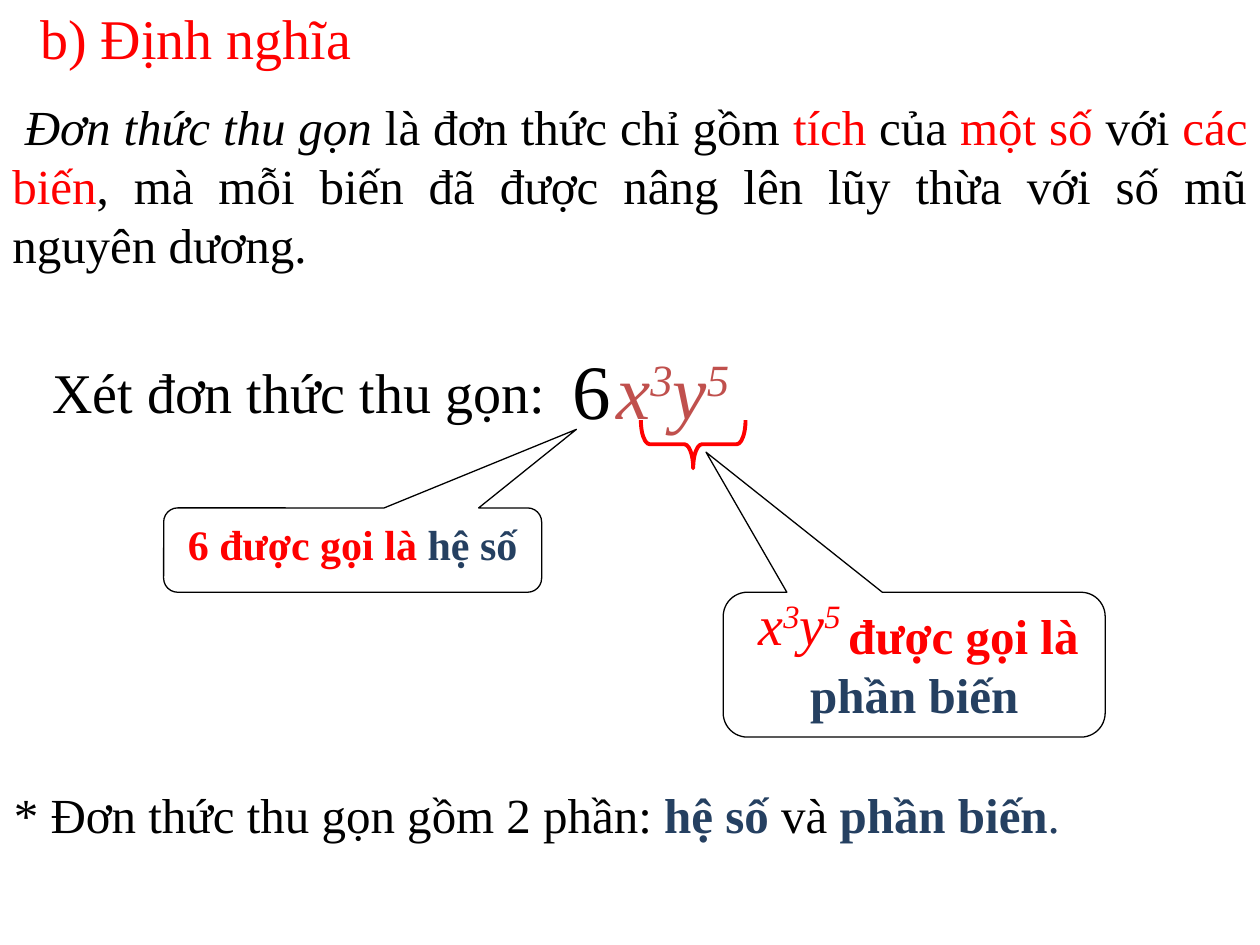
from pptx import Presentation
from pptx import util as u
from pptx.dml.color import RGBColor
from pptx.enum import shapes, text

BLACK, WHITE, RED, NAVY, BRICK = "000000", "FFFFFF", "FF0000", "254061", "C0504D"
LEFT, CENTER, JUSTIFY = text.PP_ALIGN.LEFT, text.PP_ALIGN.CENTER, text.PP_ALIGN.JUSTIFY


def color(code):
    return RGBColor.from_string(code)


class Lesson:
    font = "Times New Roman"

    def __init__(self, slide):
        self.slide = slide

    def fill_line(self, paragraph, runs, size, align=LEFT, left=0, first=0):
        paragraph.alignment = align
        if left or first:
            properties = paragraph._p.get_or_add_pPr()
            properties.set("marL", str(u.Cm(left)))
            properties.set("indent", str(u.Cm(first)))
        for words, code, *style in runs:
            run = paragraph.add_run()
            run.text = words
            run.font.name = self.font
            run.font.size = u.Pt(size)
            run.font.color.rgb = color(code)
            run.font.bold = "bold" in style
            run.font.italic = "italic" in style
            if "super" in style:
                run.font._element.set("baseline", "30000")

    def label(self, box, runs, size, wrap=True):
        frame = self.slide.shapes.add_textbox(*map(u.Cm, box)).text_frame
        frame.word_wrap = wrap
        self.fill_line(frame.paragraphs[0], runs, size)

    def power(self, box, code, size):
        runs = [(sign, code, "italic", "super" if sign.isdigit() else "base") for sign in "x3y5"]
        self.label(box, runs, size)

    def shape(self, kind, box, fill=None, line=None, width=0.75, adjust=()):
        shape = self.slide.shapes.add_shape(kind, *map(u.Cm, box))
        shape.shadow.inherit = False
        for i, value in enumerate(adjust):
            shape.adjustments[i] = value
        if fill:
            shape.fill.solid()
            shape.fill.fore_color.rgb = color(fill)
        else:
            shape.fill.background()
        if line:
            shape.line.color.rgb = color(line)
            shape.line.width = u.Pt(width)
        else:
            shape.line.fill.background()
        shape.text_frame.word_wrap = True
        shape.text_frame.vertical_anchor = text.MSO_ANCHOR.TOP
        return shape

    def statement(self, box, runs, first=0):
        panel = self.shape(shapes.MSO_SHAPE.RECTANGLE, box, WHITE)
        self.fill_line(panel.text_frame.paragraphs[0], runs, 28, JUSTIFY, first=first)

    def callout(self, box, tip, lines, size, left=0):
        bubble = self.shape(shapes.MSO_SHAPE.ROUNDED_RECTANGULAR_CALLOUT, box,
                            WHITE, BLACK, adjust=(*tip, 0.167))
        frame = bubble.text_frame
        self.fill_line(frame.paragraphs[0], lines[0], size, CENTER, left)
        for runs in lines[1:]:
            self.fill_line(frame.add_paragraph(), runs, size, CENTER)

    def brace(self, box):
        mark = self.shape(shapes.MSO_SHAPE.LEFT_BRACE, box, line=RED, width=2.25,
                          adjust=(0.184, 0.5))
        mark.rotation = 270


def main():
    deck = Presentation()
    deck.slide_width, deck.slide_height = u.Cm(25.4), u.Cm(19.05)
    lesson = Lesson(deck.slides.add_slide(deck.slide_layouts[6]))

    lesson.label((0.81, 7.09, 10.74, 1.63), [("Xét đơn thức thu gọn:", BLACK)], 32)
    lesson.label((11.29, 6.78, 1.77, 2.11), [("6", BLACK)], 44)
    lesson.power((12.17, 6.78, 4.88, 2.11), BRICK, 44)
    lesson.callout((3.3, 10.24, 7.62, 1.7), (0.592, -1.432),
                   [[("6 được gọi là ", RED, "bold"), ("hệ số", NAVY, "bold")]], 24)
    lesson.callout((14.58, 11.94, 7.7, 2.92), (-0.545, -1.467),
                   [[("được gọi là", RED, "bold")], [("phần biến", NAVY, "bold")]], 28, left=1.98)
    lesson.statement((0, 1.83, 25.4, 3.81), [
        ("Đơn thức thu gọn ", BLACK, "italic"),
        ("là đơn thức chỉ gồm ", BLACK),
        ("tích", RED),
        (" của ", BLACK),
        ("một số", RED),
        (" với ", BLACK),
        ("các biến", RED),
        (", mà mỗi biến đã được nâng lên lũy thừa với số mũ nguyên dương.", BLACK),
    ], first=0.25)
    lesson.statement((0.03, 15.7, 25.4, 1.45), [
        ("* Đơn thức thu gọn gồm 2 phần: ", BLACK),
        ("hệ số ", NAVY, "bold"),
        ("và ", BLACK),
        ("phần biến", NAVY, "bold"),
        (".", NAVY),
    ])
    lesson.brace((13.49, 7.9, 0.97, 2.11))
    lesson.label((0.56, -0.05, 6.83, 1.63), [("b) Định nghĩa", RED)], 32, wrap=False)
    lesson.power((15.04, 11.76, 2.44, 1.63), RED, 32)

    deck.save("out.pptx")


if __name__ == "__main__":
    main()
